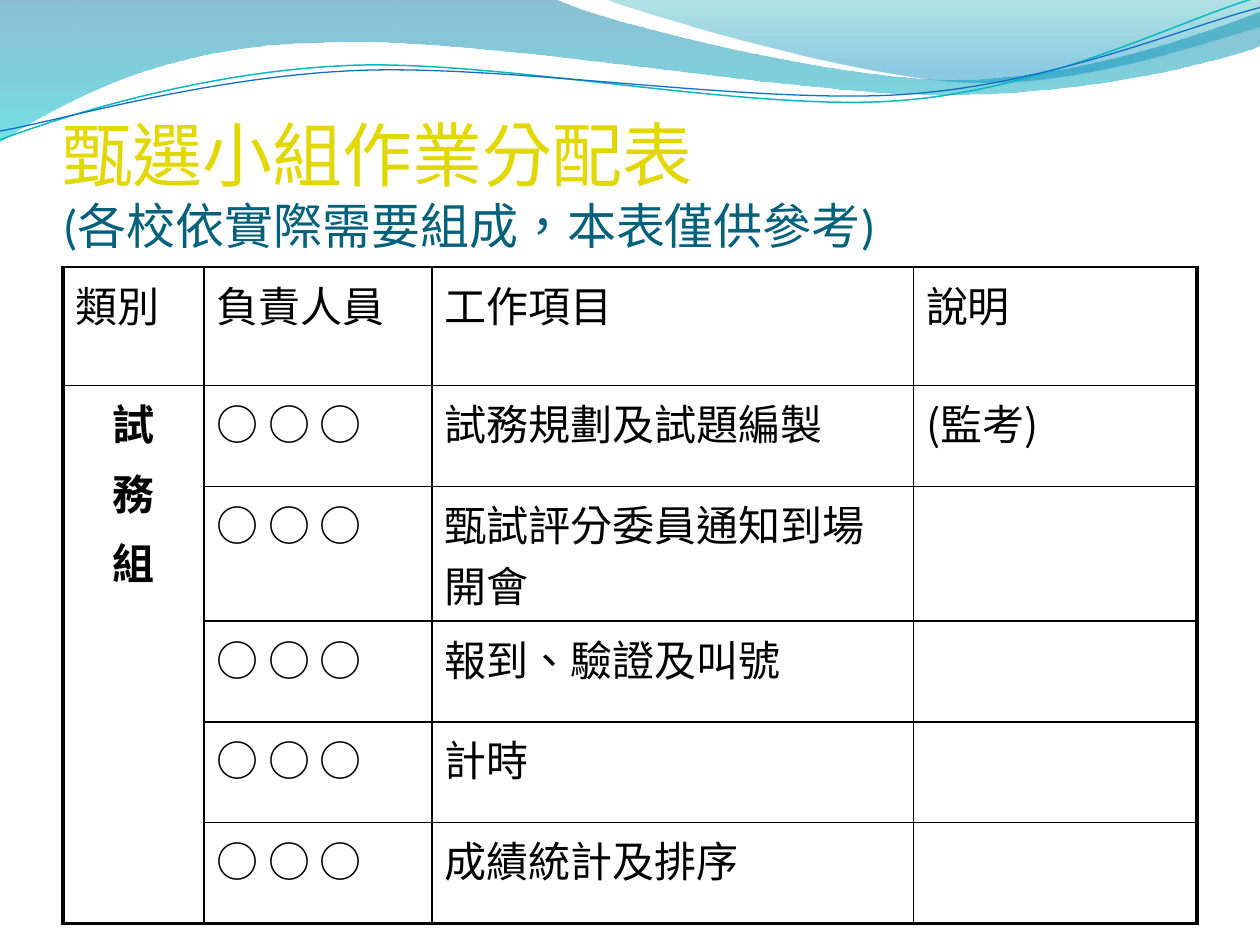
from lxml import etree
from pptx import Presentation
from pptx.dml.color import RGBColor
from pptx.enum.lang import MSO_LANGUAGE_ID
from pptx.enum.text import MSO_ANCHOR, PP_ALIGN
from pptx.oxml.ns import qn
from pptx.util import Inches, Pt

TAIWAN = MSO_LANGUAGE_ID.TRADITIONAL_CHINESE
TOP, BOTTOM, CENTER = MSO_ANCHOR.TOP, MSO_ANCHOR.BOTTOM, PP_ALIGN.CENTER
CJK, BLACK = "Noto Sans CJK SC", "000000"


def color(code):
    return RGBColor.from_string(code)


def style(run, name, size, code, bold=False):
    looks = {"name": name, "size": Pt(size), "bold": bold, "language_id": TAIWAN}
    for key, value in looks.items():
        setattr(run.font, key, value)
    run.font.color.rgb = color(code)
    east = etree.Element(qn("a:ea"), typeface=CJK)
    run.font._element.find(qn("a:latin")).addnext(east)


prs = Presentation()
prs.slide_width, prs.slide_height = Inches(10), Inches(7.5)
slide = prs.slides.add_slide(prs.slide_layouts[6])
slide.background.fill.solid()
slide.background.fill.fore_color.rgb = color("FFFFFF")

# Waves: a start point, then straight steps (2 numbers) or Bezier steps (6)
waves = [
    {"start": (0, -0.01),
     "steps": [(4.4, -0.01), (4.76, 0.17, 6.64, 0.63, 7.58, 0.63),
               (8.53, 0.63, 9.58, 0.26, 10, 0.09), (10.01, 0.36),
               (9.83, 0.44, 8.7, 0.76, 7.46, 0.75),
               (6.22, 0.75, 3.82, 0.28, 2.57, 0.34),
               (1.29, 0.35, 0.46, 0.83, -0.01, 1.13)],
     "stops": [(0, "0074A1", 45), (1, "00C6CF", 55)]},
    {"start": (4.79, -0.01),
     "steps": [(5.09, 0.11, 6.82, 0.62, 7.69, 0.65),
               (8.56, 0.69, 9.61, 0.32, 10, 0.21), (10, 0)],
     "stops": [(0, "00A1A9", 30), (0.8, "008BBF", 45)]},
    {"start": (0, 1.11),
     "steps": [(0.48, 0.93, 1.58, 0.57, 2.77, 0.52),
               (3.95, 0.47, 5.93, 0.89, 7.13, 0.8),
               (8.33, 0.71, 9.38, 0.15, 9.98, -0.02)],
     "line": ("0AB8BF", 0.85)},
    {"start": (0, 1.04),
     "steps": [(0.47, 0.96, 1.64, 0.61, 2.83, 0.56),
               (4.03, 0.51, 5.97, 0.83, 7.17, 0.75),
               (8.36, 0.67, 9.41, 0.21, 10, 0.06)],
     "line": ("0F6FC6", 0.75)},
]
for wave in waves:
    spots = [(Inches(step[i]), Inches(step[i + 1]))
             for step in wave["steps"] for i in range(0, len(step), 2)]
    x, y = wave["start"]
    pen = slide.shapes.build_freeform(Inches(x), Inches(y))
    pen.add_line_segments(spots, close="stops" in wave)
    shape = pen.convert_to_shape()
    shape.shadow.inherit = False

    # Join each three straight segments of a Bezier step into one curve
    parts = iter(list(shape._element.iter(qn("a:lnTo"))))
    for step in wave["steps"]:
        group = [next(parts) for _ in range(len(step) // 2)]
        if len(group) == 3:
            curve = etree.Element(qn("a:cubicBezTo"))
            group[0].addprevious(curve)
            for part in group:
                curve.append(part[0])
                part.getparent().remove(part)

    if "line" in wave:
        code, width = wave["line"]
        shape.fill.background()
        shape.line.color.rgb = color(code)
        shape.line.width = Pt(width)
        continue
    shape.line.fill.background()
    shape.fill.gradient()
    shape.fill.gradient_angle = 270
    for stop, (place, code, alpha) in zip(shape.fill.gradient_stops, wave["stops"]):
        stop.position = place
        stop.color.rgb = color(code)
        tint = stop._gs.find(qn("a:srgbClr"))
        etree.SubElement(tint, qn("a:alpha"), val=str(alpha * 1000))

# Title
title = slide.shapes.add_textbox(Inches(0.5), Inches(0.77), Inches(9), Inches(1.25))
frame = title.text_frame
looks = {"margin_left": 0, "margin_right": 0, "margin_top": Inches(0.05),
         "margin_bottom": 0, "word_wrap": True, "vertical_anchor": BOTTOM}
for key, value in looks.items():
    setattr(frame, key, value)
para = frame.paragraphs[0]
run = para.add_run()
run.text = "甄選小組作業分配表"
style(run, "Calibri", 40, "E2D700")
para.add_line_break()
run = para.add_run()
run.text = "(各校依實際需要組成，本表僅供參考)"
style(run, "Calibri", 28, "04617B")

# Duty table
cols = [1.12, 1.81, 3.82, 2.25]
rows = [0.94, 0.8, 1.07, 0.8, 0.8, 0.8]
ring = "○ ○ ○"
jobs = ["試務規劃及試題編製", "甄試評分委員通知到場開會", "報到、驗證及叫號",
        "計時", "成績統計及排序"]
texts = [["類別", "負責人員", "工作項目", "說明"]]
texts += [["", ring, job, ""] for job in jobs]
texts[1][0], texts[1][3] = "試\n務\n組", "(監考)"

table = slide.shapes.add_table(len(rows), len(cols), Inches(0.5), Inches(2.12),
                               Inches(sum(cols)), Inches(sum(rows))).table
table.first_row = table.horz_banding = False
for col, width in zip(table.columns, cols):
    col.width = Inches(width)
for row, height in zip(table.rows, rows):
    row.height = Inches(height)
table.cell(1, 0).merge(table.cell(5, 0))

for r, line in enumerate(texts):
    for c, text in enumerate(line):
        cell = table.cell(r, c)
        cell.fill.background()
        cell.vertical_anchor = TOP
        group = c == 0 and r > 0
        if text:
            cell.text = text
        for n, para in enumerate(cell.text_frame.paragraphs):
            para.font.size = Pt(24)
            if group:
                para.alignment = CENTER
            if n:
                para.space_before = Pt(5)
            for run in para.runs:
                style(run, CJK, 24, BLACK, group)
        thick = {"L": c == 0, "R": c == len(cols) - 1, "T": False,
                 "B": group or r == len(rows) - 1}
        props = cell._tc.get_or_add_tcPr()
        for n, (side, heavy) in enumerate(thick.items()):
            edge = etree.Element(qn("a:ln" + side), w=str(Pt(2.25 if heavy else 1)))
            ink = etree.SubElement(edge, qn("a:solidFill"))
            etree.SubElement(ink, qn("a:srgbClr"), val=BLACK)
            props.insert(n, edge)

prs.save("out.pptx")
